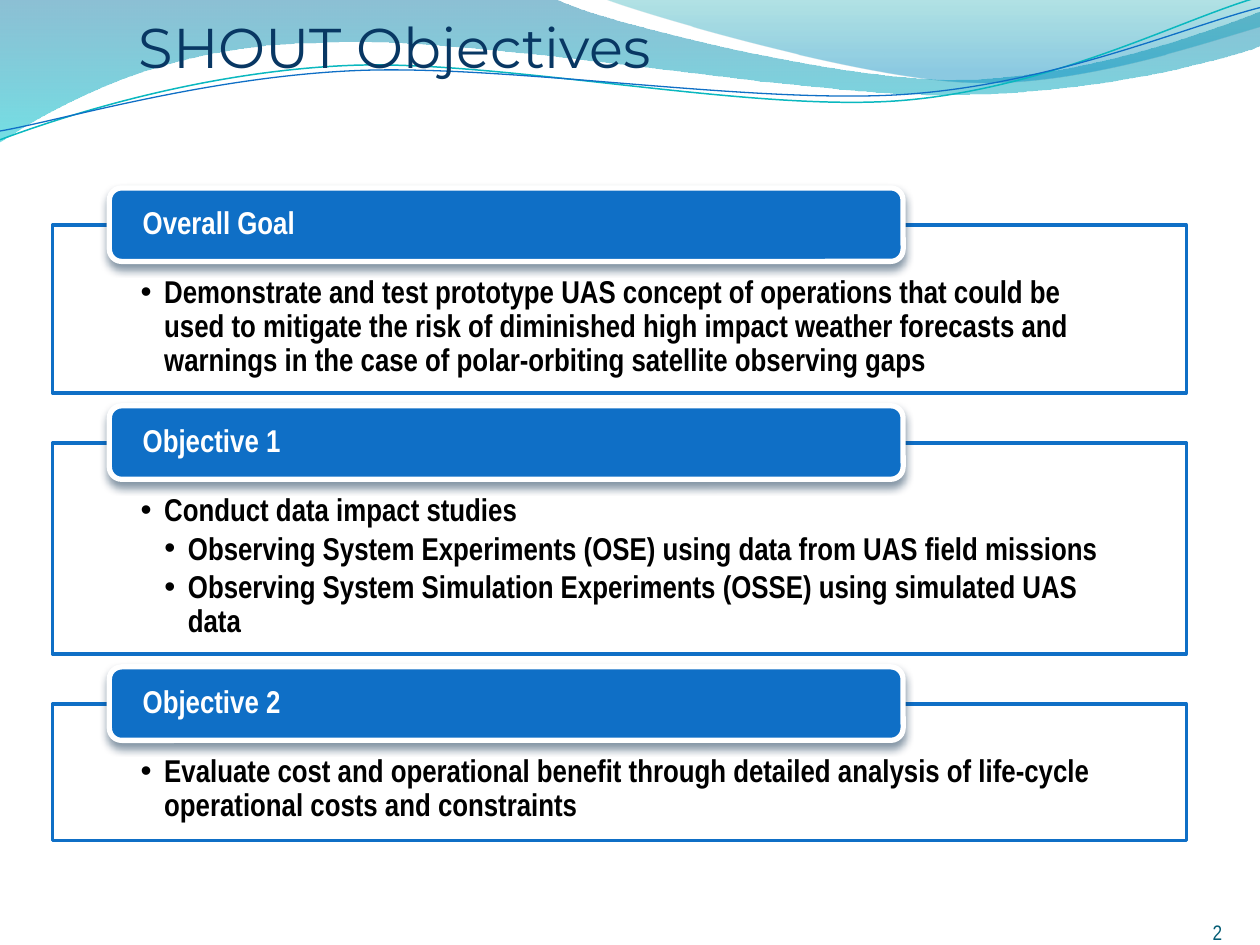
from math import cos, radians, sin

from lxml import etree
from pptx import Presentation
from pptx.dml.color import RGBColor
from pptx.enum.shapes import MSO_SHAPE
from pptx.enum.text import MSO_ANCHOR, PP_ALIGN
from pptx.oxml import parse_xml
from pptx.oxml.ns import nsdecls, qn
from pptx.util import Pt

RECT, ROUNDED = MSO_SHAPE.RECTANGLE, MSO_SHAPE.ROUNDED_RECTANGLE
TOP, MIDDLE, BOTTOM = MSO_ANCHOR.TOP, MSO_ANCHOR.MIDDLE, MSO_ANCHOR.BOTTOM
LEFT, RIGHT = PP_ALIGN.LEFT, PP_ALIGN.RIGHT

BLUE = RGBColor(0x0F, 0x6F, 0xC6)
TEAL = RGBColor(0x0A, 0xB8, 0xBF)
NAVY = RGBColor(0x08, 0x37, 0x63)
DARK_TEAL = RGBColor(0x04, 0x5D, 0x75)
WHITE = RGBColor(0xFF, 0xFF, 0xFF)
BLACK = RGBColor(0, 0, 0)
WAVE_BLUE = RGBColor(0x00, 0x74, 0xA1)
WAVE_CYAN = RGBColor(0x00, 0xC6, 0xCF)
WAVE_GREEN = RGBColor(0x00, 0xA1, 0xA9)
WAVE_SKY = RGBColor(0x00, 0x8B, 0xBF)

FONT = "Arial Narrow"


def set_opacity(color_parent, percent):
    color = color_parent.find(".//" + qn("a:srgbClr"))
    etree.SubElement(color, qn("a:alpha")).set("val", str(percent * 1000))


def format_text(sp, anchor, margins, paragraphs, **font):
    """Fill a shape with (text, level) paragraphs; levels above 0 have bullets."""
    tf = sp.text_frame
    tf.word_wrap = True
    tf.vertical_anchor = anchor
    tf.margin_left, tf.margin_top, tf.margin_right, tf.margin_bottom = map(Pt, margins)
    for i, (text, level) in enumerate(paragraphs):
        p = tf.paragraphs[0] if i == 0 else tf.add_paragraph()
        p.alignment = LEFT
        p.line_spacing = 0.9
        p.space_after = Pt(2.7)
        if level:
            p.level = level
            pPr = p._p.get_or_add_pPr()
            pPr.set("marL", str(Pt(13.5 * level)))
            pPr.set("indent", str(-Pt(13.5)))
            etree.SubElement(pPr, qn("a:buFont")).set("typeface", "Arial")
            etree.SubElement(pPr, qn("a:buChar")).set("char", "•")
        r = p.add_run()
        r.text = text
        r.font.color.rgb = font["color"]
        for name in ("name", "size", "bold"):
            setattr(r.font, name, font[name])


prs = Presentation()
prs.slide_width, prs.slide_height = Pt(720), Pt(540)
s = prs.slides.add_slide(prs.slide_layouts[5])

# Header waves in inches on the slide: one point is a line, three are a Bezier curve
waves = [
    {"box": (-0.01, -0.01, 10.02, 1.14), "start": (0, -0.01),
     "steps": [(4.4, -0.01), (4.76, 0.17, 6.64, 0.63, 7.58, 0.63),
               (8.53, 0.63, 9.58, 0.26, 10, 0.09), (10.01, 0.36),
               (9.83, 0.44, 8.7, 0.76, 7.46, 0.75), (6.22, 0.75, 3.82, 0.28, 2.57, 0.34),
               (1.29, 0.35, 0.46, 0.83, -0.01, 1.13), (0, -0.01)],
     "stops": [(0, WAVE_BLUE, 45), (1, WAVE_CYAN, 55)]},
    {"box": (4.79, -0.01, 5.21, 0.7), "start": (4.79, -0.01),
     "steps": [(5.09, 0.11, 6.82, 0.62, 7.69, 0.65), (8.56, 0.69, 9.61, 0.32, 10, 0.21),
               (10, 0), (4.79, -0.01)],
     "stops": [(0, WAVE_GREEN, 30), (0.8, WAVE_SKY, 45)]},
    {"box": (-0.02, 0.22, 10.02, 0.71), "start": (0, 1.11), "tilt": 2.7,
     "steps": [(0.48, 0.93, 1.58, 0.57, 2.77, 0.52), (3.95, 0.47, 5.93, 0.89, 7.13, 0.8),
               (8.33, 0.71, 9.38, 0.15, 9.98, -0.02)],
     "line": (TEAL, 0.85)},
    {"box": (-0.02, 0.3, 10.03, 0.58), "start": (0, 1.04), "tilt": 2.7,
     "steps": [(0.47, 0.96, 1.64, 0.61, 2.83, 0.56), (4.03, 0.51, 5.97, 0.83, 7.17, 0.75),
               (8.36, 0.67, 9.41, 0.21, 10, 0.06)],
     "line": (BLUE, 0.75)},
]
for wave in waves:
    left, top, width, height = (72 * v for v in wave["box"])
    filled = "stops" in wave
    builder = s.shapes.build_freeform(Pt(left), Pt(top))
    builder.add_line_segments([(Pt(left + width), Pt(top + height))], close=filled)
    sp = builder.convert_to_shape()
    sp.shadow.inherit = False

    # Swap the straight diagonal for the curves, turned back by the tilt
    tilt = wave.get("tilt", 0)
    sp.rotation = -tilt
    cos_t, sin_t = cos(radians(tilt)), sin(radians(tilt))
    outline = sp._element.spPr.find(".//" + qn("a:path"))
    for child in list(outline):
        outline.remove(child)
    for i, step in enumerate([wave["start"]] + wave["steps"]):
        tag = "a:moveTo" if i == 0 else "a:lnTo" if len(step) == 2 else "a:cubicBezTo"
        segment = etree.SubElement(outline, qn(tag))
        for x, y in zip(step[::2], step[1::2]):
            dx, dy = 72 * x - left - width / 2, 72 * y - top - height / 2
            pt = etree.SubElement(segment, qn("a:pt"))
            pt.set("x", str(Pt(width / 2 + dx * cos_t - dy * sin_t)))
            pt.set("y", str(Pt(height / 2 + dx * sin_t + dy * cos_t)))

    if filled:
        etree.SubElement(outline, qn("a:close"))
        sp.line.fill.background()
        sp.fill.gradient()
        sp.fill.gradient_angle = 270
        for stop, (position, color, opacity) in zip(sp.fill.gradient_stops, wave["stops"]):
            stop.position = position
            stop.color.rgb = color
            set_opacity(stop._gs, opacity)
    else:
        sp.fill.background()
        sp.line.color.rgb, sp.line.width = wave["line"][0], Pt(wave["line"][1])

# Title, in front of the waves
title = s.shapes.title
s.shapes._spTree.append(title._element)
title.left, title.top, title.width, title.height = Pt(72), Pt(0), Pt(648), Pt(66)
format_text(title, TOP, (7.2, 7.2, 0, 0), [("SHOUT Objectives", 0)],
            name="Montserrat", size=Pt(32), bold=False, color=NAVY)
title.text_frame.paragraphs[0].line_spacing = 1.0

# Slide number
number = s.shapes.add_textbox(Pt(660), Pt(511), Pt(60), Pt(29))
format_text(number, BOTTOM, (0, 0, 21.6, 0), [("2", 0)],
            name=FONT, size=Pt(12), bold=False, color=DARK_TEAL)
p = number.text_frame.paragraphs[0]
p.alignment, p.line_spacing, p.space_after = RIGHT, 1.0, Pt(0)

# Goal and objectives: an outlined box with a heading tab over its top edge
sections = [
    ("Overall Goal", 95.8, [
        ("Demonstrate and test prototype UAS concept of operations that could be used to "
         "mitigate the risk of diminished high impact weather forecasts and warnings in "
         "the case of polar-orbiting satellite observing gaps", 1)]),
    ("Objective 1", 120.5, [
        ("Conduct data impact studies", 1),
        ("Observing System Experiments (OSE) using data from UAS field missions", 2),
        ("Observing System Simulation Experiments (OSSE) using simulated UAS data", 2)]),
    ("Objective 2", 78, [
        ("Evaluate cost and operational benefit through detailed analysis of life-cycle "
         "operational costs and constraints", 1)]),
]
BOX_GAP, TAB_RISE = 28.7, 21.3
top = 128.7
for heading, height, paragraphs in sections:
    box = s.shapes.add_shape(RECT, Pt(30), Pt(top), Pt(648), Pt(height))
    tab = s.shapes.add_shape(ROUNDED, Pt(62.5), Pt(top - TAB_RISE), Pt(453.6), Pt(42))
    for sp, fill, line, width in ((box, WHITE, BLUE, 2), (tab, BLUE, WHITE, 3)):
        sp.shadow.inherit = False
        sp.fill.solid()
        sp.fill.fore_color.rgb = fill
        sp.line.color.rgb, sp.line.width = line, Pt(width)
    set_opacity(box._element.spPr.find(qn("a:solidFill")), 90)
    effects = tab._element.spPr.find(qn("a:effectLst"))
    effects.append(parse_xml(
        f'<a:outerShdw {nsdecls("a")} blurRad="{Pt(4.5)}" dist="{Pt(3)}" dir="5400000" '
        'rotWithShape="0"><a:srgbClr val="042747"><a:alpha val="48000"/></a:srgbClr>'
        '</a:outerShdw>'))
    format_text(box, TOP, (50.4, 29.2, 50.4, 10), paragraphs,
                name=FONT, size=Pt(18), bold=True, color=BLACK)
    format_text(tab, MIDDLE, (17, 0, 17, 0), [(heading, 0)],
                name=FONT, size=Pt(18), bold=True, color=WHITE)
    top += height + BOX_GAP

prs.save("out.pptx")
